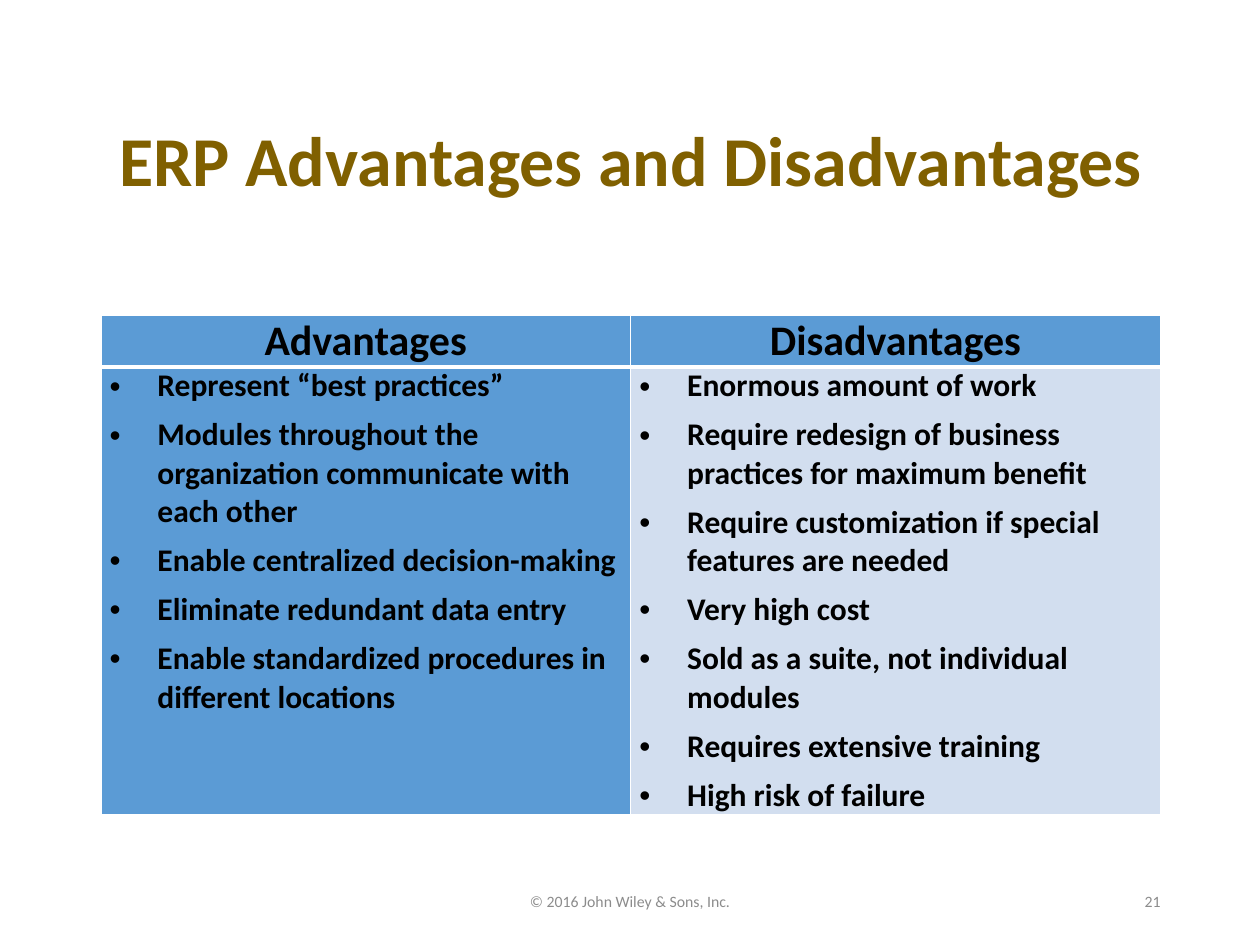
import pptx
import pptx.dml.color
import pptx.enum.text
import pptx.oxml
import pptx.oxml.ns
import pptx.util
from lxml import etree

RGBColor = pptx.dml.color.RGBColor
ALIGN = pptx.enum.text.PP_ALIGN
MIDDLE = pptx.enum.text.MSO_ANCHOR.MIDDLE
Inches, Pt = pptx.util.Inches, pptx.util.Pt
qn = pptx.oxml.ns.qn

GOLD = RGBColor(0x80, 0x60, 0x00)
BLUE = RGBColor(0x5B, 0x9B, 0xD5)
PALE_BLUE = RGBColor(0xD2, 0xDE, 0xEF)
BLACK = RGBColor(0, 0, 0)
WHITE = RGBColor(0xFF, 0xFF, 0xFF)
GREY = RGBColor(0x8C, 0x8C, 0x8C)

WIDTH, HEIGHT = Inches(10), Inches(7.5)
HANGING = Inches(0.38)

# Heading, fill of the list below it, points
COLUMNS = [
    ("Advantages", BLUE, [
        "Represent “best practices”",
        "Modules throughout the organization communicate with each other",
        "Enable centralized decision-making",
        "Eliminate redundant data entry",
        "Enable standardized procedures in different locations",
    ]),
    ("Disadvantages", PALE_BLUE, [
        "Enormous amount of work",
        "Require redesign of business practices for maximum benefit",
        "Require customization if special features are needed",
        "Very high cost",
        "Sold as a suite, not individual modules",
        "Requires extensive training",
        "High risk of failure",
    ]),
]


def share(left, top, width, height):
    """Turn shares of the slide's size into a box."""
    return (int(left * WIDTH), int(top * HEIGHT),
            int(width * WIDTH), int(height * HEIGHT))


def set_font(paragraph, size, color, bold=False):
    font = paragraph.font
    font.name, font.size, font.bold = "Calibri", Pt(size), bold
    font.color.rgb = color


def add_bullet(paragraph):
    properties = paragraph._p.get_or_add_pPr()
    properties.set("marL", str(HANGING))
    properties.set("indent", str(-HANGING))
    etree.SubElement(properties, qn("a:buFont"), typeface="Arial")
    etree.SubElement(properties, qn("a:buChar"), char="•")


def add_borders(cell, **widths):
    """Draw white cell borders; widths are points keyed by L, R, T, B."""
    properties = cell._tc.get_or_add_tcPr()
    for side in "LRTB":
        line = etree.SubElement(properties, qn(f"a:ln{side}"),
                                w=str(Pt(widths.get(side, 1))))
        fill = etree.SubElement(line, qn("a:solidFill"))
        etree.SubElement(fill, qn("a:srgbClr"), val=str(WHITE))


def fill_cell(cell, lines, size, color, bulleted=False, **borders):
    add_borders(cell, **borders)
    cell.fill.solid()
    cell.fill.fore_color.rgb = color
    cell.margin_left = cell.margin_right = Inches(0.07)
    cell.margin_top = cell.margin_bottom = 0
    cell.text_frame.text = "\n".join(lines)
    for paragraph in cell.text_frame.paragraphs:
        paragraph.space_after = Pt(6)
        if bulleted:
            add_bullet(paragraph)
        else:
            paragraph.alignment = ALIGN.CENTER
        set_font(paragraph, size, BLACK, bold=True)


def place_title(slide, box):
    title = slide.shapes.title
    title.left, title.top, title.width, title.height = box
    title.text_frame.text = "ERP Advantages and Disadvantages"
    title.text_frame.vertical_anchor = MIDDLE
    paragraph = title.text_frame.paragraphs[0]
    paragraph.alignment = ALIGN.CENTER
    paragraph.line_spacing = 0.9
    set_font(paragraph, 40, GOLD, bold=True)


def place_comparison(slide, box):
    table = slide.shapes.add_table(2, len(COLUMNS), *box).table
    table.horz_banding = False
    header_height = Inches(0.4)
    table.rows[0].height = header_height
    table.rows[1].height = box[3] - header_height
    for index, (heading, list_fill, points) in enumerate(COLUMNS):
        fill_cell(table.cell(0, index), [heading], 24, BLUE, B=3)
        fill_cell(table.cell(1, index), points, 18, list_fill,
                  bulleted=True, T=3)


def place_footer(slide, box, wording, alignment):
    frame = slide.shapes.add_textbox(*box).text_frame
    frame.word_wrap = True
    frame.vertical_anchor = MIDDLE
    frame.text = wording
    paragraph = frame.paragraphs[0]
    paragraph.alignment = alignment
    set_font(paragraph, 9, GREY)


def main():
    presentation = pptx.Presentation()
    presentation.slide_width, presentation.slide_height = WIDTH, HEIGHT
    slide = presentation.slides.add_slide(presentation.slide_layouts[5])
    place_title(slide, share(0.042, 0.09, 0.917, 0.167))
    place_comparison(slide, share(0.08, 0.334, 0.841, 0.526))
    place_footer(slide, share(0.331, 0.927, 0.338, 0.053),
                 "© 2016 John Wiley & Sons, Inc.", ALIGN.CENTER)
    place_footer(slide, share(0.706, 0.927, 0.225, 0.053), "21", ALIGN.RIGHT)
    presentation.save("out.pptx")


if __name__ == "__main__":
    main()
